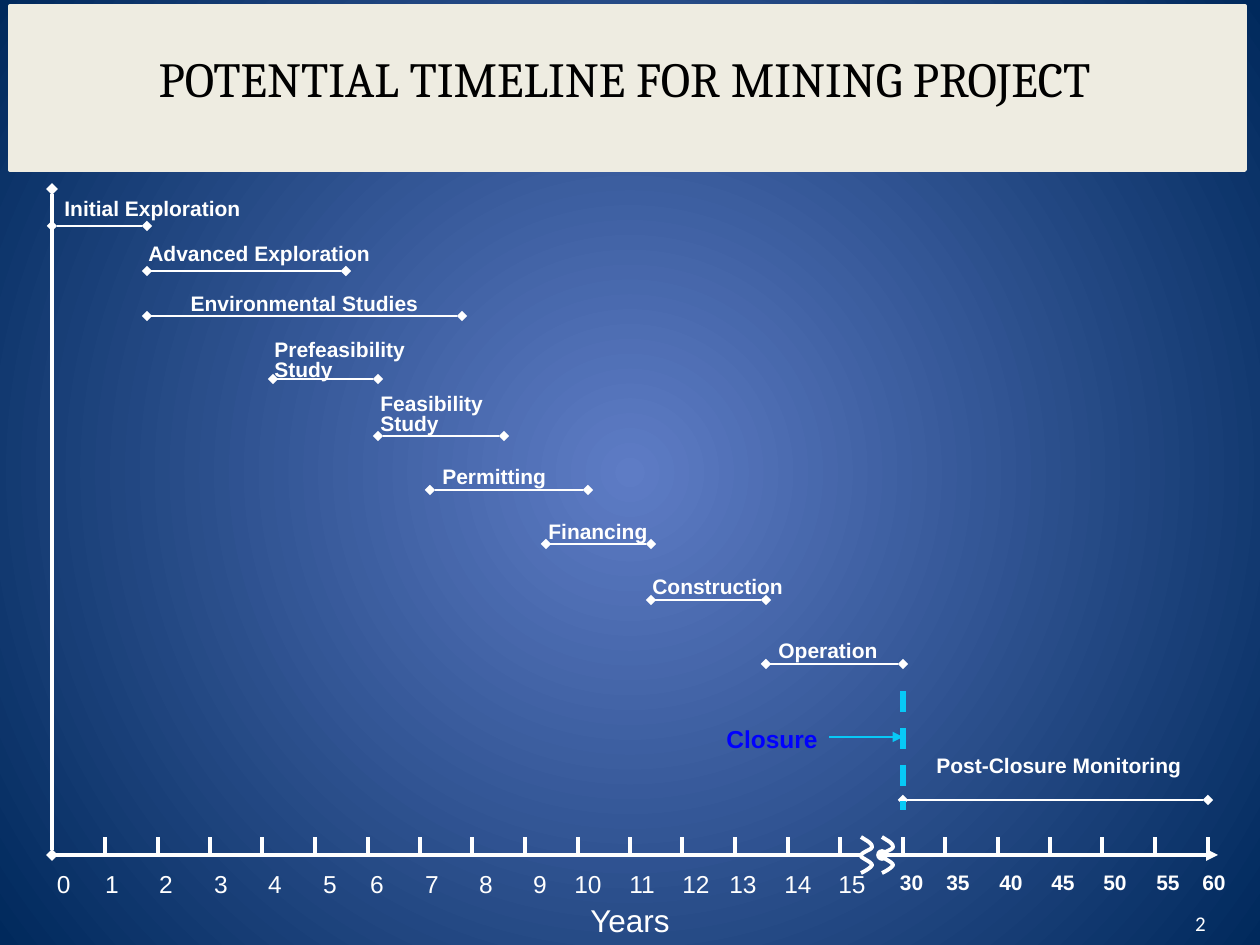
from pptx import Presentation
from pptx.dml.color import RGBColor
from pptx.enum.dml import MSO_LINE
from pptx.enum.shapes import MSO_CONNECTOR, MSO_SHAPE
from pptx.enum.text import MSO_ANCHOR, MSO_AUTO_SIZE, PP_ALIGN
from pptx.oxml.ns import qn
from pptx.oxml.xmlchemy import OxmlElement
from pptx.util import Pt

WHITE = RGBColor(0xFF, 0xFF, 0xFF)
BLACK = RGBColor(0x00, 0x00, 0x00)
CREAM = RGBColor(0xEE, 0xEC, 0xE1)
BLUE = RGBColor(0x00, 0x00, 0xFF)
CYAN = RGBColor(0x07, 0xC9, 0xF7)
GLOW = RGBColor(0x5E, 0x7C, 0xC5)
NAVY = RGBColor(0x00, 0x29, 0x5C)

PIXELS_PER_INCH = 126
YEAR_WIDTH = 52.5
AXIS_LEFT, AXIS_Y, TICK_TOP = 52, 855, 837
CLOSURE_X, MONITORING_END = 903, 1208

# Name, start, end, line y, line weight, label left, label top, label width
ACTIVITIES = [
    ("Initial Exploration", 52, 147, 226, 0.75, 52, 189, 220),
    ("Advanced Exploration", 147, 346, 271, 1.5, 136, 234, 252),
    ("Environmental Studies", 147, 462, 316, 1.5, 147, 284, 315),
    ("Prefeasibility\nStudy", 273, 378, 379, 1.5, 262, 335, 252),
    ("Feasibility\nStudy", 378, 504, 436, 1.5, 368, 389, 189),
    ("Permitting", 430, 588, 490, 1.5, 430, 457, 189),
    ("Financing", 546, 651, 544, 1.5, 536, 512, 210),
    ("Construction", 651, 766, 600, 1.5, 640, 567, 179),
    ("Operation", 766, CLOSURE_X, 664, 1.5, 766, 631, 168),
    ("Post-Closure Monitoring", CLOSURE_X, MONITORING_END, 800, 1.5, 924, 746, 273),
]

# Label centres along the two parts of the axis
EARLY_YEARS = dict(zip(range(16), [64, 112, 166, 221, 275, 330, 377, 432,
                                   486, 540, 588, 642, 696, 743, 798, 852]))
LATE_YEARS = dict(zip(range(30, 61, 5), [912, 958, 1011, 1063, 1115, 1168, 1214]))

# Cubic curves of the break mark, relative to its top left
BREAK_CURVES = [
    [(0, 0), (6, 4), (11, 6), (11, 10)],
    [(11, 10), (11, 13), (0, 15), (0, 19)],
    [(0, 19), (0, 21), (11, 25), (11, 28)],
    [(11, 28), (11, 30), (3, 35), (0, 36)],
]


def px(length):
    return round(length * 914400 / PIXELS_PER_INCH)


def set_background(slide):
    fill = slide.background.fill
    fill.gradient()
    for stop, color, position in zip(fill.gradient_stops, (GLOW, NAVY), (0, 1)):
        stop.color.rgb = color
        stop.position = position
    gradient = slide.element.find(".//" + qn("a:gradFill"))
    gradient.remove(gradient.find(qn("a:lin")))
    radial = OxmlElement("a:path")
    radial.set("path", "circle")
    centre = OxmlElement("a:fillToRect")
    for side in "ltrb":
        centre.set(side, "50000")
    radial.append(centre)
    gradient.append(radial)


def format_text(paragraph, size, color=WHITE, bold=False, name="Arial", align=PP_ALIGN.LEFT):
    paragraph.alignment = align
    font = paragraph.font
    font.size, font.bold, font.name = Pt(size), bold, name
    font.color.rgb = color


def add_label(slide, text, left, top, width, height, size, **style):
    box = slide.shapes.add_textbox(px(left), px(top), px(width), px(height))
    frame = box.text_frame
    frame.word_wrap = True
    frame.text = text
    for paragraph in frame.paragraphs:
        format_text(paragraph, size, **style)
        if len(frame.paragraphs) > 1:
            paragraph.line_spacing = 0.8
    return box


def add_line(slide, start, end, weight, color=WHITE, head=None, tail=None, dash=None):
    connector = slide.shapes.add_connector(
        MSO_CONNECTOR.STRAIGHT, *map(px, (*start, *end)))
    connector.line.color.rgb = color
    connector.line.width = Pt(weight)
    if dash:
        connector.line.dash_style = dash
    properties = connector.element.spPr
    outline = properties.find(qn("a:ln"))
    for tag, kind in (("a:headEnd", head), ("a:tailEnd", tail)):
        if kind:
            marker = OxmlElement(tag)
            marker.set("type", kind)
            outline.append(marker)
    properties.append(OxmlElement("a:effectLst"))


def curve_point(curve, t):
    weights = ((1 - t) ** 3, 3 * t * (1 - t) ** 2, 3 * t ** 2 * (1 - t), t ** 3)
    return [sum(w * point[axis] for w, point in zip(weights, curve)) for axis in (0, 1)]


def add_break_mark(slide, left):
    steps = 8
    points = [curve_point(curve, step / steps)
              for curve in BREAK_CURVES for step in range(1, steps + 1)]
    builder = slide.shapes.build_freeform(px(left), px(TICK_TOP))
    builder.add_line_segments(
        [(px(left + x), px(TICK_TOP + y)) for x, y in points], close=False)
    mark = builder.convert_to_shape()
    mark.shadow.inherit = False
    mark.fill.background()
    mark.line.color.rgb = WHITE
    mark.line.width = Pt(2.25)


def add_year_labels(slide, centres, left, width, height, inset, size, bold):
    box = add_label(slide, "\t".join(map(str, centres)), left, 863, width, height,
                    size, bold=bold)
    box.text_frame.margin_left = px(inset)
    tabs = OxmlElement("a:tabLst")
    for centre in list(centres.values())[1:]:
        tab = OxmlElement("a:tab")
        tab.set("pos", str(px(centre - left - inset)))
        tab.set("algn", "ctr")
        tabs.append(tab)
    properties = box.text_frame.paragraphs[0]._p.get_or_add_pPr()
    properties.insert_element_before(tabs, "a:defRPr", "a:extLst")


def add_title(slide):
    panel = slide.shapes.add_shape(MSO_SHAPE.RECTANGLE, px(10), px(6), px(1235), px(164))
    panel.shadow.inherit = False
    panel.fill.solid()
    panel.fill.fore_color.rgb = CREAM
    panel.line.color.rgb = CREAM
    panel.line.width = Pt(2.25)
    slide.shapes.element.insert(2, panel.element)  # behind the title

    title = slide.shapes.title
    title.left, title.top, title.width, title.height = map(px, (42, 42, 1165, 72))
    frame = title.text_frame
    frame.text = "POTENTIAL TIMELINE FOR MINING PROJECT"
    frame.auto_size = MSO_AUTO_SIZE.NONE
    frame.vertical_anchor = MSO_ANCHOR.TOP
    format_text(frame.paragraphs[0], 28, BLACK, name="Cambria", align=PP_ALIGN.CENTER)


def add_axes(slide):
    add_line(slide, (AXIS_LEFT, 189), (AXIS_LEFT, AXIS_Y), 2.25, head="diamond", tail="diamond")
    add_line(slide, (AXIS_LEFT, AXIS_Y), (861, AXIS_Y), 2.25)
    add_line(slide, (882, AXIS_Y), (1218, AXIS_Y), 2.25, head="oval", tail="triangle")
    early_ticks = [round(YEAR_WIDTH * step) for step in range(2, 17)]
    late_ticks = [CLOSURE_X] + [round(YEAR_WIDTH * step) for step in range(18, 24)]
    for x in early_ticks + late_ticks:
        add_line(slide, (x, AXIS_Y), (x, TICK_TOP), 2.25)
    for left in (861, 882):
        add_break_mark(slide, left)
    add_year_labels(slide, EARLY_YEARS, 31, 851, 42, 26, 14, False)
    add_year_labels(slide, LATE_YEARS, 882, 378, 38, 18, 12, True)
    add_label(slide, "Years", 546, 895, 168, 50, 18, align=PP_ALIGN.CENTER)


def add_activities(slide):
    for name, start, end, y, weight, left, top, width in ACTIVITIES:
        add_line(slide, (start, y), (end, y), weight, head="diamond", tail="diamond")
        align = PP_ALIGN.CENTER if name == "Environmental Studies" else PP_ALIGN.LEFT
        height = 46 if "\n" in name else 33
        add_label(slide, name, left, top, width, height, 12, bold=True, align=align)


def add_closure(slide):
    add_line(slide, (CLOSURE_X, 691), (CLOSURE_X, 810), 3, CYAN, dash=MSO_LINE.DASH)
    add_label(slide, "Closure", 714, 718, 136, 37, 14, color=BLUE, bold=True)
    add_line(slide, (829, 737), (CLOSURE_X, 737), 1.5, CYAN, tail="triangle")


def add_slide_number(slide):
    box = add_label(slide, "", 924, 890, 294, 66, 12, name="Calibri", align=PP_ALIGN.RIGHT)
    box.text_frame.vertical_anchor = MSO_ANCHOR.MIDDLE
    field = OxmlElement("a:fld")
    field.set("id", "{B6F15528-21DE-4FAA-801E-634DDDAF4B2B}")
    field.set("type", "slidenum")
    text = OxmlElement("a:t")
    text.text = "2"
    field.append(text)
    box.text_frame.paragraphs[0]._p.append(field)


def main():
    presentation = Presentation()
    presentation.slide_width, presentation.slide_height = px(1260), px(945)
    presentation.element.set("firstSlideNum", "2")
    slide = presentation.slides.add_slide(presentation.slide_layouts[5])
    set_background(slide)
    add_title(slide)
    add_axes(slide)
    add_activities(slide)
    add_closure(slide)
    add_slide_number(slide)
    presentation.save("out.pptx")


if __name__ == "__main__":
    main()
